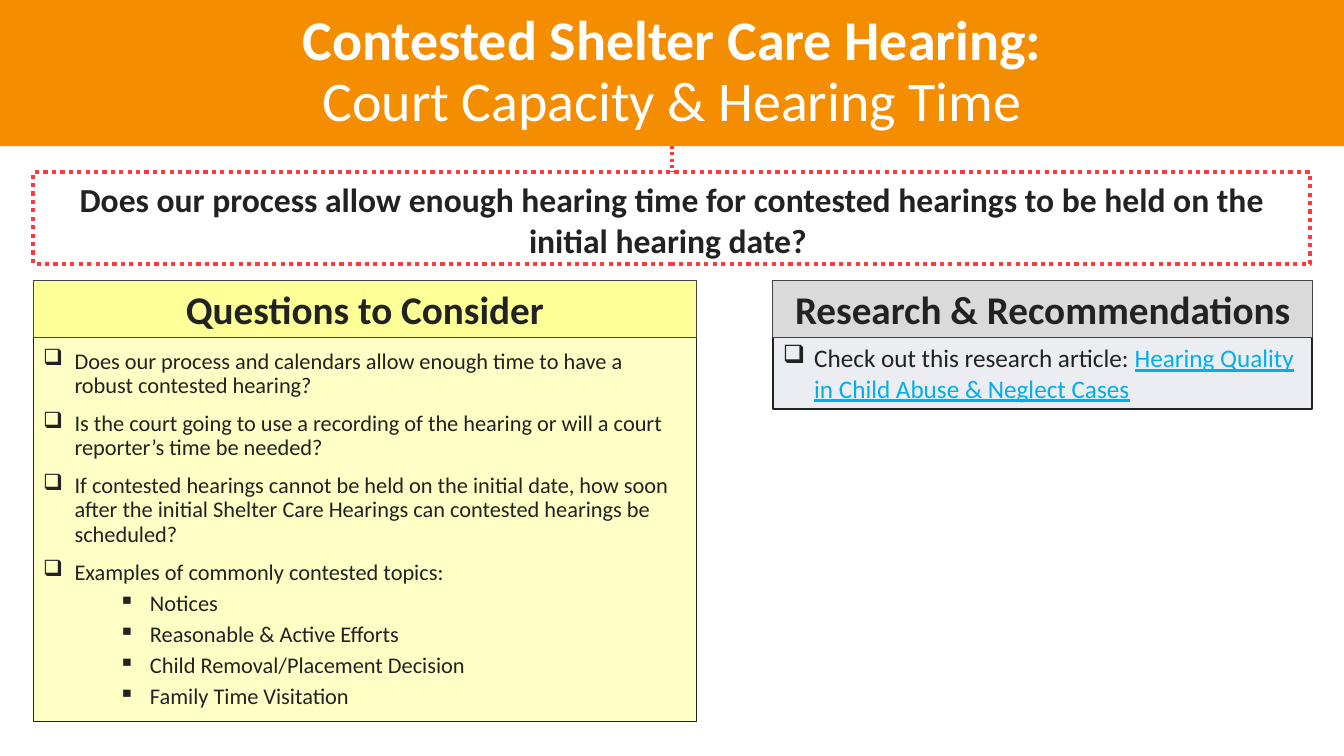
from dataclasses import dataclass

from lxml.etree import SubElement
from pptx import Presentation
from pptx.dml.color import RGBColor
from pptx.enum.dml import MSO_LINE
from pptx.enum.shapes import MSO_CONNECTOR, MSO_SHAPE
from pptx.enum.text import MSO_ANCHOR as Anchor, MSO_AUTO_SIZE, PP_ALIGN as Align
from pptx.oxml.ns import qn
from pptx.util import Cm, Pt

FONT = "Calibri"
COLORS = {
    "banner": "F58D00", "white": "FFFFFF", "ink": "222222", "header_line": "444444",
    "questions": "FEFFC5", "questions_header": "FDFF97",
    "research": "EBEDF3", "research_header": "DADADA",
    "accent": "FF393E", "link": "00AFEC",
}
SLIDE_W, SLIDE_H = 33.87, 19.05
BANNER_H = 3.68
FRAME_LEFT, FRAME_TOP, FRAME_W, FRAME_H = 0.84, 4.34, 32.18, 2.31
HEADER_TOP, HEADER_H = 7.06, 1.45
BULLET_HANG = 0.79


@dataclass
class Run:
    text: str
    size: float
    color: str = "ink"
    bold: bool = False
    underline: bool = False


@dataclass
class Para:
    runs: list[Run]
    align: Align | None = None
    spacing: float = 1.0
    before: float = 0
    bullet: str = ""
    level: int = 0
    indent: float = BULLET_HANG


@dataclass
class Panel:
    left: float
    width: float
    height: float
    heading: str
    header_fill: str
    body_fill: str
    line_width: float
    anchor: Anchor
    paras: list[Para]


def question(text: str) -> Para:
    return Para([Run(text, 16)], Align.LEFT, 0.9, 10, "❑")


def topic(text: str) -> Para:
    return Para([Run(text, 16)], Align.LEFT, 0.9, 5, "▪", 1, 2.69)


QUESTIONS = [
    "Does our process and calendars allow enough time to have a robust contested hearing?",
    "Is the court going to use a recording of the hearing or will a court reporter’s time be needed?",
    "If contested hearings cannot be held on the initial date, how soon after the initial "
    "Shelter Care Hearings can contested hearings be scheduled?",
    "Examples of commonly contested topics:",
]
TOPICS = ["Notices", "Reasonable & Active Efforts", "Child Removal/Placement Decision",
          "Family Time Visitation"]
PANELS = [
    Panel(FRAME_LEFT, 16.71, 9.68, "Questions to Consider", "questions_header", "questions",
          0.75, Anchor.MIDDLE, [question(t) for t in QUESTIONS] + [topic(t) for t in TOPICS]),
    Panel(19.48, 13.59, 1.8, "Research & Recommendations", "research_header", "research",
          1, Anchor.TOP,
          [Para([Run("Check out this research article: ", 18),
                 Run("Hearing Quality in Child Abuse & Neglect Cases", 18, "link",
                     underline=True)], Align.LEFT, bullet="❑")]),
]


def rgb(name: str) -> RGBColor:
    return RGBColor.from_string(COLORS[name])


def place(sp, left: float, top: float, width: float, height: float) -> None:
    sp.left, sp.top, sp.width, sp.height = Cm(left), Cm(top), Cm(width), Cm(height)


def set_line(line, color: str, width: float, dotted: bool = False) -> None:
    line.color.rgb = rgb(color)
    line.width = Pt(width)
    if dotted:
        line.dash_style = MSO_LINE.ROUND_DOT


def set_bullet(p, para: Para) -> None:
    p.level = para.level
    pPr = p._p.get_or_add_pPr()
    pPr.set("marL", str(Cm(para.indent)))
    pPr.set("indent", str(-Cm(BULLET_HANG)))
    SubElement(pPr, qn("a:buChar")).set("char", para.bullet)


def write(sp, paras: list[Para], anchor: Anchor = Anchor.TOP) -> None:
    tf = sp.text_frame
    tf.word_wrap = True
    tf.auto_size = MSO_AUTO_SIZE.NONE
    tf.vertical_anchor = anchor
    for i, para in enumerate(paras):
        p = tf.add_paragraph() if i else tf.paragraphs[0]
        p.alignment = para.align
        p.line_spacing = para.spacing
        p.space_before = Pt(para.before)
        if para.bullet:
            set_bullet(p, para)
        for run in para.runs:
            r = p.add_run()
            r.text = run.text
            r.font.name = FONT
            r.font.size = Pt(run.size)
            r.font.bold = run.bold
            r.font.underline = run.underline
            r.font.color.rgb = rgb(run.color)


def add_box(slide, left: float, top: float, width: float, height: float, fill: str = ""):
    """Add a flat rectangle, unfilled when no fill is named."""
    sp = slide.shapes.add_shape(MSO_SHAPE.RECTANGLE, Cm(left), Cm(top), Cm(width), Cm(height))
    sp.shadow.inherit = False
    if fill:
        sp.fill.solid()
        sp.fill.fore_color.rgb = rgb(fill)
    else:
        sp.fill.background()
    return sp


def add_banner(slide) -> None:
    title = slide.shapes.title
    place(title, 0, 0, SLIDE_W, BANNER_H)
    title.fill.solid()
    title.fill.fore_color.rgb = rgb("banner")
    write(title, [
        Para([Run("Contested Shelter Care Hearing:", 40, "white", True)], Align.CENTER, 0.9),
        Para([Run("Court Capacity & Hearing Time", 40, "white")], Align.CENTER, 0.9),
    ], Anchor.MIDDLE)


def add_key_question(slide) -> None:
    frame = add_box(slide, FRAME_LEFT, FRAME_TOP, FRAME_W, FRAME_H)
    set_line(frame.line, "accent", 3, dotted=True)
    text = slide.shapes.add_textbox(Cm(1.37), Cm(4.39), Cm(31.12), Cm(FRAME_H))
    write(text, [Para([Run("Does our process allow enough hearing time for contested hearings "
                           "to be held on the initial hearing date? ", 24, bold=True)],
                      Align.CENTER)])
    middle = Cm(SLIDE_W / 2)
    link = slide.shapes.add_connector(MSO_CONNECTOR.STRAIGHT, middle, Cm(BANNER_H),
                                      middle, Cm(FRAME_TOP))
    set_line(link.line, "accent", 2.25, dotted=True)
    SubElement(link._element.spPr, qn("a:effectLst"))


def add_panel(slide, panel: Panel) -> None:
    body = add_box(slide, panel.left, HEADER_TOP + HEADER_H, panel.width, panel.height,
                   panel.body_fill)
    set_line(body.line, "ink", panel.line_width)
    write(body, panel.paras, panel.anchor)
    header = add_box(slide, panel.left, HEADER_TOP, panel.width, HEADER_H, panel.header_fill)
    set_line(header.line, "header_line", 0.75)
    write(header, [Para([Run(panel.heading, 28, bold=True)], Align.CENTER)])


def main() -> None:
    prs = Presentation()
    prs.slide_width, prs.slide_height = Cm(SLIDE_W), Cm(SLIDE_H)
    slide = prs.slides.add_slide(prs.slide_layouts[5])
    add_banner(slide)
    add_key_question(slide)
    for panel in PANELS:
        add_panel(slide, panel)
    prs.save("out.pptx")


if __name__ == "__main__":
    main()
